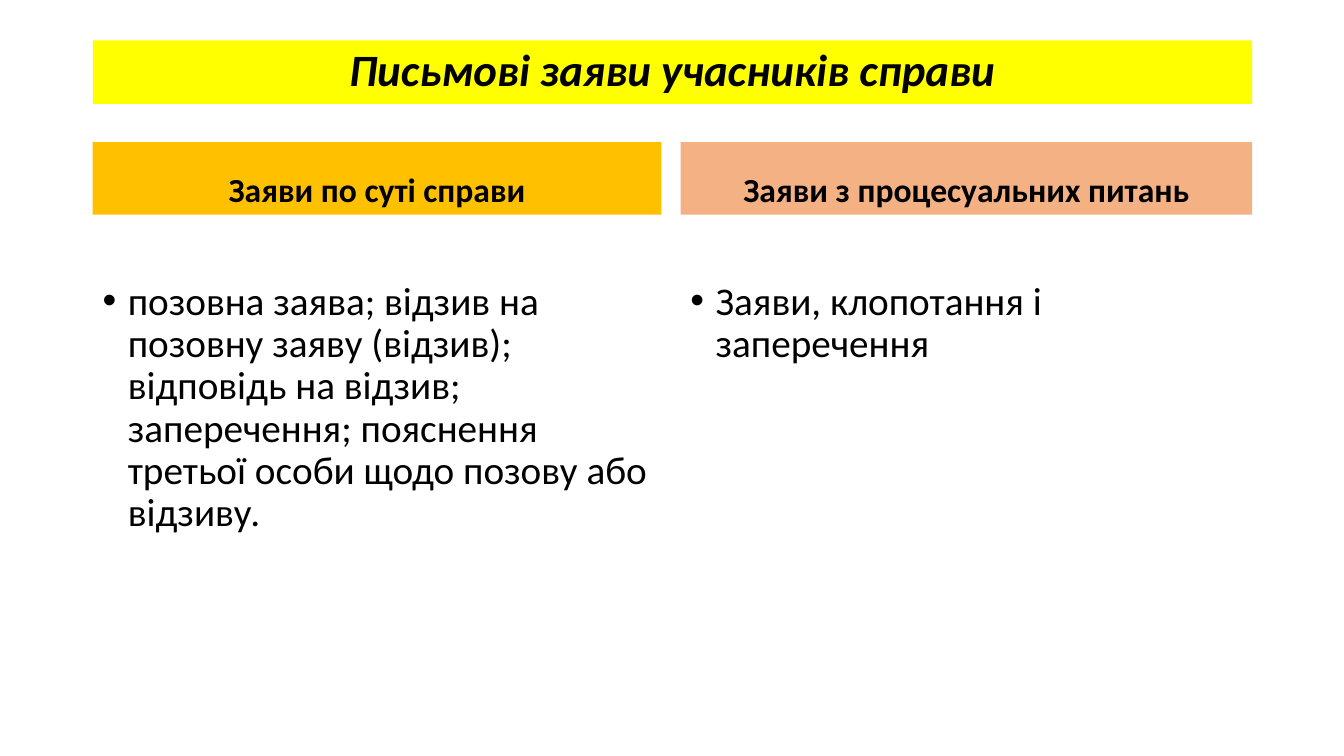
import pptx
import pptx.util
import pptx.dml.color
import pptx.enum.text
import lxml.etree
from pptx.util import Inches

ALIGN = pptx.enum.text.PP_ALIGN
ANCHOR = pptx.enum.text.MSO_ANCHOR
TITLE_ONLY = 5
LEFT = 0.92

# heading, heading fill, bullet text, left, width
COLUMNS = [
    ("Заяви по суті справи", "FFC000",
     "позовна заява; відзив на позовну заяву (відзив); відповідь на відзив; "
     "заперечення; пояснення третьої особи щодо позову або відзиву.",
     LEFT, 5.64),
    ("Заяви з процесуальних питань", "F4B183",
     "Заяви, клопотання і заперечення", 6.75, 5.67),
]


def color(value):
    return pptx.dml.color.RGBColor.from_string(value)


def fill_with(box, value):
    box.fill.solid()
    box.fill.fore_color.rgb = color(value)


def write(box, text, size, anchor, align, bold=False, italic=False, before=0):
    frame = box.text_frame
    frame.text = text
    frame.word_wrap = True
    frame.auto_size = pptx.enum.text.MSO_AUTO_SIZE.NONE
    frame.vertical_anchor = anchor
    para = frame.paragraphs[0]
    para.alignment = align
    para.line_spacing = 0.9
    para.space_before = pptx.util.Pt(before)
    font = para.runs[0].font
    font.name = "Calibri"
    font.size = pptx.util.Pt(size)
    font.bold = bold
    font.italic = italic
    font.color.rgb = color("000000")
    return para


def add_bullet(para):
    properties = para._p.get_or_add_pPr()
    properties.set("marL", str(Inches(0.25)))
    properties.set("indent", str(Inches(-0.25)))
    namespace = properties.nsmap["a"]
    font = lxml.etree.SubElement(properties, f"{{{namespace}}}buFont")
    font.set("typeface", "Arial")
    mark = lxml.etree.SubElement(properties, f"{{{namespace}}}buChar")
    mark.set("char", "•")


def set_title(page, text):
    title = page.shapes.title
    title.left, title.top = Inches(LEFT), Inches(0.4)
    title.width, title.height = Inches(11.5), Inches(0.63)
    fill_with(title, "FFFF00")
    write(title, text, 32, ANCHOR.MIDDLE, ALIGN.CENTER, bold=True, italic=True)


def add_text_box(page, left, top, width, height):
    return page.shapes.add_textbox(
        Inches(left), Inches(top), Inches(width), Inches(height))


def add_column(page, heading, fill, text, left, width):
    # Coloured heading
    header = add_text_box(page, left, 1.41, width, 0.72)
    fill_with(header, fill)
    write(header, heading, 24, ANCHOR.BOTTOM, ALIGN.CENTER, bold=True, before=10)
    # Bulleted text below it
    body = add_text_box(page, left, 2.74, width, 4.03)
    add_bullet(write(body, text, 28, ANCHOR.TOP, ALIGN.LEFT, before=10))


def main():
    deck = pptx.Presentation()
    deck.slide_width, deck.slide_height = Inches(13.33), Inches(7.5)
    page = deck.slides.add_slide(deck.slide_layouts[TITLE_ONLY])
    set_title(page, "Письмові заяви учасників справи")
    for column in COLUMNS:
        add_column(page, *column)
    deck.save("out.pptx")


if __name__ == "__main__":
    main()
